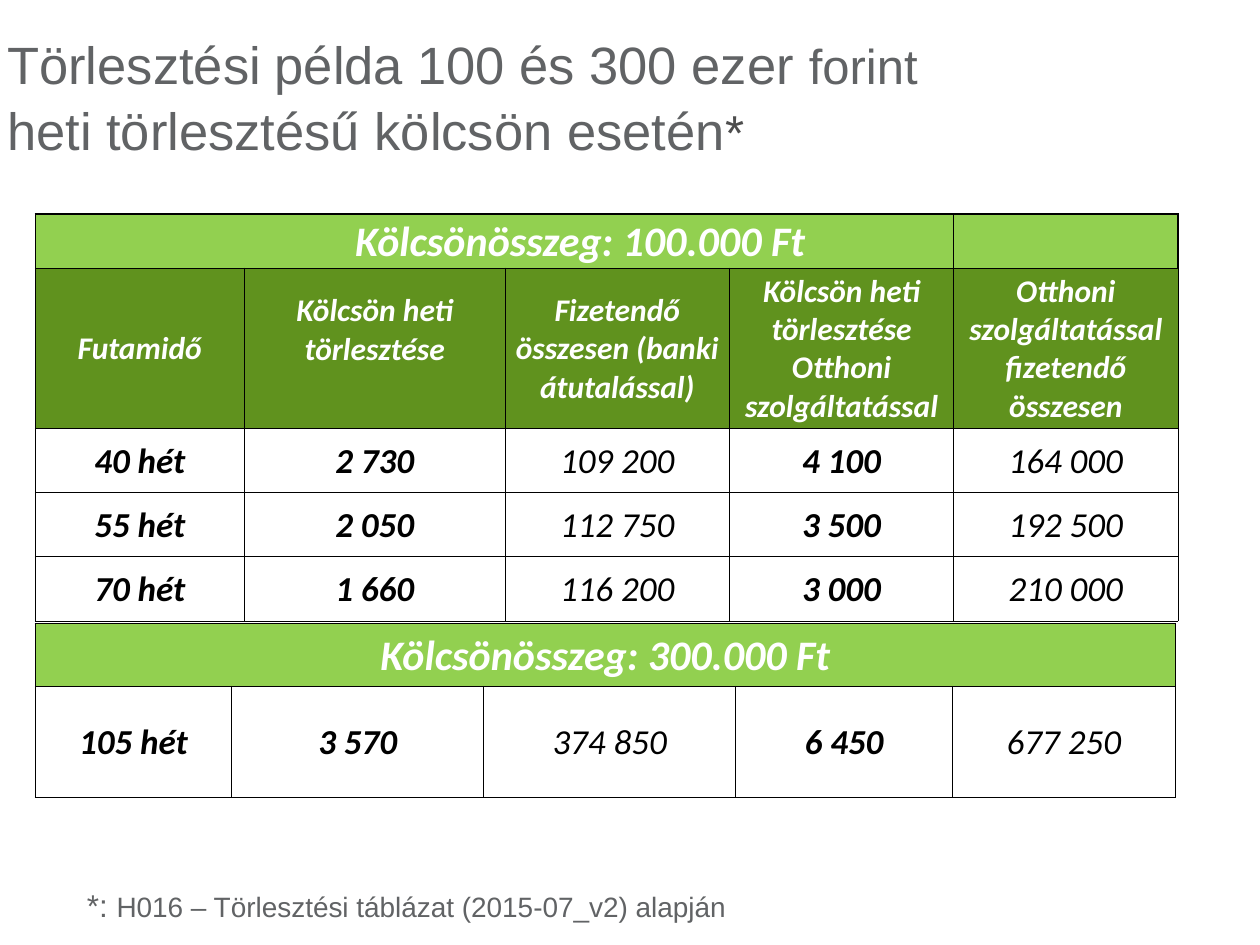
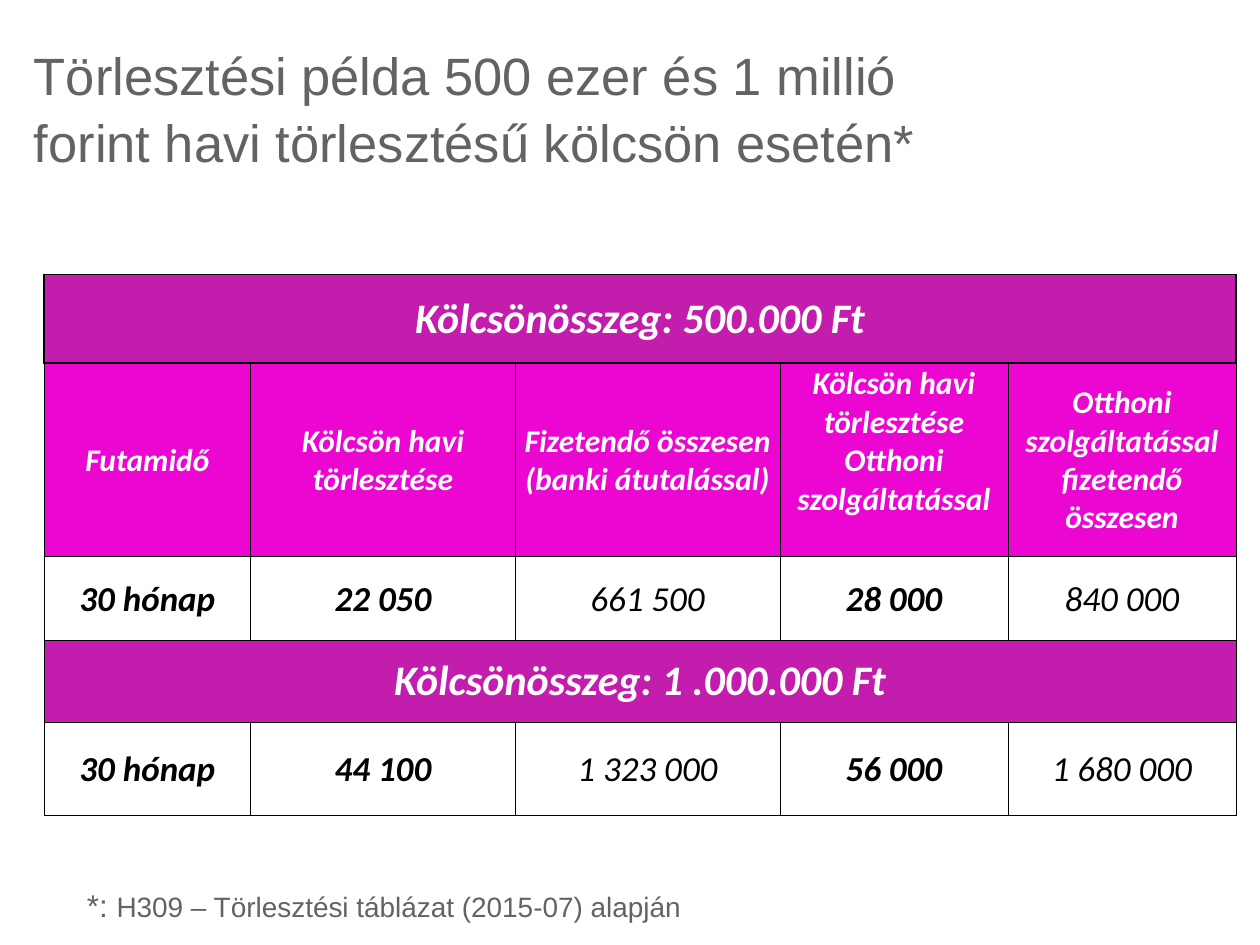
from pptx import Presentation
from pptx.util import Inches, Pt
from pptx.dml.color import RGBColor
from pptx.enum.text import MSO_ANCHOR, PP_ALIGN
from pptx.oxml.ns import qn
from lxml import etree

MIDDLE = MSO_ANCHOR.MIDDLE
TOP = MSO_ANCHOR.TOP
CENTER = PP_ALIGN.CENTER

GREY, DARK_GREY, WHITE, BLACK = "616365", "4D4D4D", "FFFFFF", "000000"
GREEN = {"band": "92D050", "header": "60921E"}
MAGENTA = {"band": "C21DAC", "header": "EC06D1"}
CELL_STYLES = {
    "band": {"size": Pt(24), "bold": True, "color": WHITE},
    "header": {"size": Pt(18), "bold": True, "color": WHITE},
    "data": {"size": Pt(20), "color": BLACK},
}
BOLD_COLUMNS = (0, 1, 3)
THIN, THICK = 0.5, 1
INSET = 0.01
LINE_HEIGHT = 0.3
BREAK = "\n"


def color(hex_code):
    return RGBColor.from_string(hex_code)


def set_font(font, values):
    for name, value in values.items():
        if name == "color":
            font.color.rgb = color(value)
        else:
            setattr(font, name, value)


def add_text(page, left, top, width, height, spans, anchor, spacing):
    box = page.shapes.add_textbox(*map(Inches, (left, top, width, height)))
    frame = box.text_frame
    frame.word_wrap = True
    frame.vertical_anchor = anchor
    para = frame.paragraphs[0]
    para.line_spacing = spacing
    for item in spans:
        if item == BREAK:
            para.add_line_break()
            continue
        text, size, hex_code = item
        span = para.add_run()
        span.text = text
        set_font(span.font, {"name": "Arial", "size": Pt(size), "color": hex_code})


def add_title(page, left, top, width, spans):
    opening = [("Törlesztési", 30, GREY), (" ", 28, DARK_GREY)]
    add_text(page, left, top, width, 1.25, opening + spans, MIDDLE, 1.05)


def add_footnote(page, source):
    spans = [("*: ", 18, GREY), (source, 16, GREY)]
    add_text(page, 0.59, 6.98, 7.09, 0.4, spans, TOP, 1.0)


def set_borders(cell, top_width, width):
    properties = cell._tc.get_or_add_tcPr()
    sides = {"lnL": width, "lnR": width, "lnT": top_width, "lnB": width}
    for index, (side, points) in enumerate(sides.items()):
        line = etree.Element(qn("a:" + side), w=str(Pt(points)))
        fill = etree.SubElement(line, qn("a:solidFill"))
        etree.SubElement(fill, qn("a:srgbClr"), val=BLACK)
        properties.insert(index, line)


def fill_cell(cell, text, kind, bold):
    cell.vertical_anchor = MIDDLE
    cell.margin_left = cell.margin_right = cell.margin_top = Inches(INSET)
    cell.margin_bottom = 0
    cell.text_frame.text = text
    values = {"name": "Calibri", "italic": True, "bold": bold, **CELL_STYLES[kind]}
    for para in cell.text_frame.paragraphs:
        para.alignment = CENTER
        set_font(para.font, values)
        for span in para.runs:
            set_font(span.font, values)


def add_loan_table(page, left, top, widths, heights, rows, fills):
    frame = page.shapes.add_table(
        len(rows), len(widths), Inches(left), Inches(top),
        Inches(sum(widths)), Inches(sum(heights)))
    table = frame.table
    table.first_row = table.horz_banding = False
    for column, width in zip(table.columns, widths):
        column.width = Inches(width)
    for row, height in zip(table.rows, heights):
        row.height = Inches(height)

    width_above = THIN
    for r, (kind, texts, option) in enumerate(rows):
        line_width = option["line"] if kind == "band" else THIN
        for c in range(len(widths)):
            cell = table.cell(r, c)
            text = texts[c] if c < len(texts) else ""
            fill_cell(cell, text, kind, c in BOLD_COLUMNS)
            if kind in fills:
                cell.fill.solid()
                cell.fill.fore_color.rgb = color(fills[kind])
            else:
                cell.fill.background()
            set_borders(cell, max(line_width, width_above), line_width)
        if kind == "band":
            first = table.cell(r, 0)
            first.merge(table.cell(r, option["span"] - 1))
            first.margin_left = Inches(option["indent"])
        if kind == "header":
            table.cell(r, option["raised"]).margin_bottom = Inches(LINE_HEIGHT)
        width_above = line_width


def band(amount, line=THICK, span=5, indent=INSET):
    option = {"line": line, "span": span, "indent": indent}
    return "band", [f"Kölcsönösszeg: {amount} Ft"], option


def header(period, raised):
    payment = f"Kölcsön {period} törlesztése"
    texts = ["Futamidő", payment, "Fizetendő összesen (banki átutalással)",
             payment + "\nOtthoni szolgáltatással",
             "Otthoni szolgáltatással fizetendő összesen"]
    return "header", texts, {"raised": raised}


def data(*texts):
    return "data", texts, {}


def build_weekly(page):
    add_loan_table(
        page, 0.28, 1.7, [1.66, 2.07, 1.78, 1.78, 1.78],
        [0.43, 1.27] + [0.51] * 3,
        [band("100.000", span=4, indent=1.37),
         header("heti", raised=1),
         data("40 hét", "2 730", "109 200", "4 100", "164 000"),
         data("55 hét", "2 050", "112 750", "3 500", "192 500"),
         data("70 hét", "1 660", "116 200", "3 000", "210 000")], GREEN)
    add_title(page, -0.04, 0.13, 9, [
        ("példa 100 és 300 ezer ", 30, GREY), ("forint ", 28, GREY), BREAK,
        ("heti törlesztésű kölcsön esetén", 30, GREY), ("*", 28, DARK_GREY)])
    add_loan_table(
        page, 0.28, 4.95, [1.56, 2, 2, 1.72, 1.77], [0.5, 0.88],
        [band("300.000"),
         data("105 hét", "3 570", "374 850", "6 450", "677 250")], GREEN)
    add_footnote(page, "H016 – Törlesztési táblázat (2015-07_v2) alapján")


def build_monthly(page):
    add_loan_table(
        page, 0.35, 2.18, [1.64, 2.1, 2.1, 1.81, 1.81],
        [0.7, 1.54, 0.66, 0.65, 0.74],
        [band("500.000"),
         header("havi", raised=3),
         data("30 hónap", "22 050", "661 500", "28 000", "840 000"),
         band("1 .000.000", line=THIN),
         data("30 hónap", "44 100", "1 323 000", "56 000", "1 680 000")], MAGENTA)
    add_title(page, 0.17, 0.22, 8.69, [
        ("példa 500 ezer és 1 millió ", 30, GREY), BREAK,
        ("forint havi törlesztésű kölcsön esetén*", 30, GREY)])
    add_footnote(page, "H309 – Törlesztési táblázat (2015-07) alapján")


def main():
    deck = Presentation()
    deck.slide_width, deck.slide_height = Inches(10), Inches(7.5)
    blank = deck.slide_layouts[6]
    for build in (build_weekly, build_monthly):
        build(deck.slides.add_slide(blank))
    deck.save("out.pptx")


if __name__ == "__main__":
    main()
